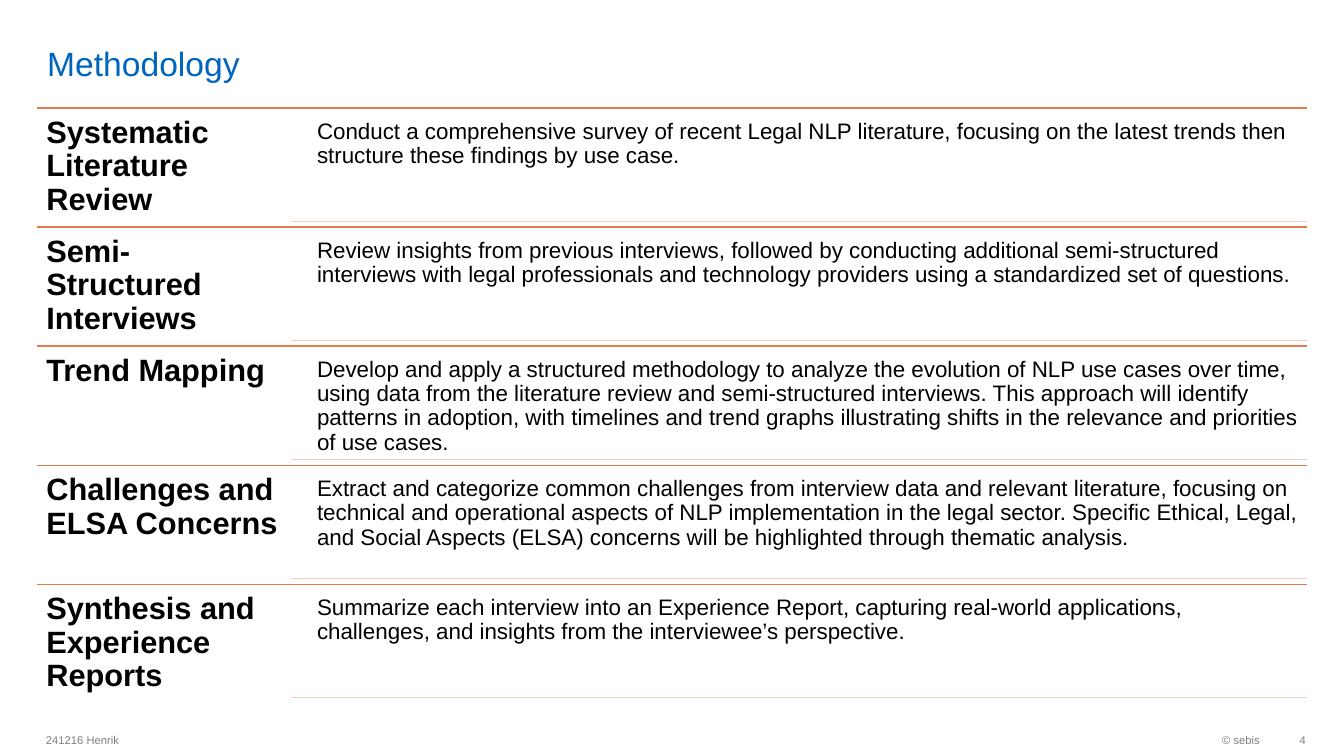
from lxml.etree import SubElement
from pptx import Presentation
from pptx.dml.color import RGBColor
from pptx.enum.shapes import MSO_CONNECTOR
from pptx.enum.text import MSO_ANCHOR, MSO_AUTO_SIZE, PP_ALIGN
from pptx.oxml.ns import qn
from pptx.util import Cm, Pt

BLUE = RGBColor(0x00, 0x65, 0xBD)
BLACK = RGBColor(0x00, 0x00, 0x00)
GRAY = RGBColor(0x80, 0x80, 0x80)
ORANGE = RGBColor(0xE3, 0x7C, 0x4D)
PINK = RGBColor(0xF2, 0xCC, 0xC2)

LEFT, RIGHT = 0.94, 32.94
FIRST_ROW_TOP, ROW_HEIGHT = 2.72, 3.0
STEP_WIDTH = 6.4
DESCRIPTION_LEFT, DESCRIPTION_HEIGHT, DESCRIPTION_OFFSET = 7.82, 2.72, 0.14

STEPS = [
    ("Systematic Literature Review",
     "Conduct a comprehensive survey of recent Legal NLP literature, focusing on "
     "the latest trends then structure these findings by use case."),
    ("Semi-Structured Interviews",
     "Review insights from previous interviews, followed by conducting additional "
     "semi-structured interviews with legal professionals and technology providers "
     "using a standardized set of questions."),
    ("Trend Mapping",
     "Develop and apply a structured methodology to analyze the evolution of NLP use "
     "cases over time, using data from the literature review and semi-structured "
     "interviews. This approach will identify patterns in adoption, with timelines "
     "and trend graphs illustrating shifts in the relevance and priorities of use cases."),
    ("Challenges and ELSA Concerns",
     "Extract and categorize common challenges from interview data and relevant "
     "literature, focusing on technical and operational aspects of NLP implementation "
     "in the legal sector. Specific Ethical, Legal, and Social Aspects (ELSA) concerns "
     "will be highlighted through thematic analysis."),
    ("Synthesis and Experience Reports",
     "Summarize each interview into an Experience Report, capturing real-world "
     "applications, challenges, and insights from the interviewee’s perspective."),
]


def add_text(left, top, width, height, text, size, color, inset=None):
    """Add a wrapped one-paragraph box, lengths in cm, and return its shape."""
    shape = slide.shapes.add_textbox(Cm(left), Cm(top), Cm(width), Cm(height))
    frame = shape.text_frame
    frame.word_wrap = True
    if inset is not None:
        frame.margin_left = frame.margin_right = Cm(inset)
        frame.margin_top = frame.margin_bottom = Cm(inset)
    paragraph = frame.paragraphs[0]
    paragraph.text = text
    paragraph.font.name = "Arial"
    paragraph.font.size = Pt(size)
    paragraph.font.color.rgb = color
    return shape


def add_rule(left, top, color):
    """Add a horizontal line from left to the right margin, in cm."""
    connector = slide.shapes.add_connector(
        MSO_CONNECTOR.STRAIGHT, Cm(left), Cm(top), Cm(RIGHT), Cm(top))
    connector.line.color.rgb = color
    connector.line.width = Pt(0.85)
    SubElement(connector._element.spPr, qn("a:effectLst"))


presentation = Presentation()
presentation.slide_width = Cm(33.87)
presentation.slide_height = Cm(19.05)
slide = presentation.slides.add_slide(presentation.slide_layouts[5])

title = slide.shapes.title
title.left, title.top, title.width, title.height = Cm(LEFT), Cm(0.91), Cm(5.41), Cm(1.2)
title_frame = title.text_frame
title_frame.text = "Methodology"
title_frame.auto_size = MSO_AUTO_SIZE.NONE
title_frame.vertical_anchor = MSO_ANCHOR.BOTTOM
title_frame.margin_left = title_frame.margin_right = Cm(0.25)
title_frame.margin_top = title_frame.margin_bottom = 0
paragraph = title_frame.paragraphs[0]
paragraph.alignment = PP_ALIGN.LEFT
paragraph.font.name = "Arial"
paragraph.font.size = Pt(24)
paragraph.font.color.rgb = BLUE

for index, (step, description) in enumerate(STEPS):
    top = FIRST_ROW_TOP + index * ROW_HEIGHT
    description_top = top + DESCRIPTION_OFFSET
    add_rule(LEFT, top, ORANGE)
    step_box = add_text(LEFT, top, STEP_WIDTH, ROW_HEIGHT, step, 22, BLACK, 0.23)
    step_box.text_frame.paragraphs[0].font.bold = True
    description_box = add_text(
        DESCRIPTION_LEFT, description_top, RIGHT - DESCRIPTION_LEFT,
        DESCRIPTION_HEIGHT, description, 16, BLACK, 0.17)
    for box in (step_box, description_box):
        box.text_frame.paragraphs[0].line_spacing = 0.9
    add_rule(LEFT + STEP_WIDTH, description_top + DESCRIPTION_HEIGHT, PINK)

for left, width, text, alignment in [
    (0.91, 16, "241216 Henrik", PP_ALIGN.LEFT),
    (26.06, 5.94, "© sebis", PP_ALIGN.RIGHT),
    (32, 0.91, "4", PP_ALIGN.RIGHT),
]:
    footer = add_text(left, 18.25, width, 0.81, text, 8, GRAY)
    footer.text_frame.vertical_anchor = MSO_ANCHOR.MIDDLE
    footer.text_frame.paragraphs[0].alignment = alignment
footer.text_frame.margin_right = 0  # the page number ends at the right margin

presentation.save("out.pptx")
